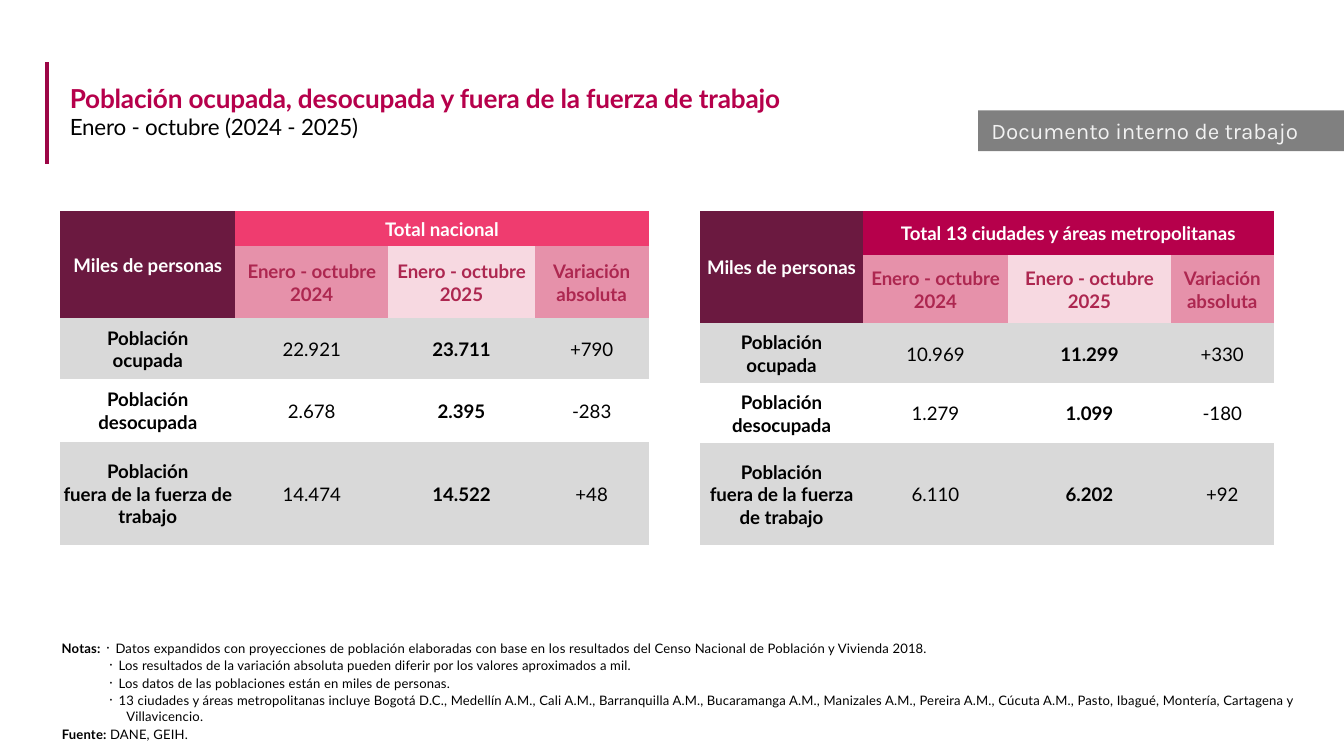
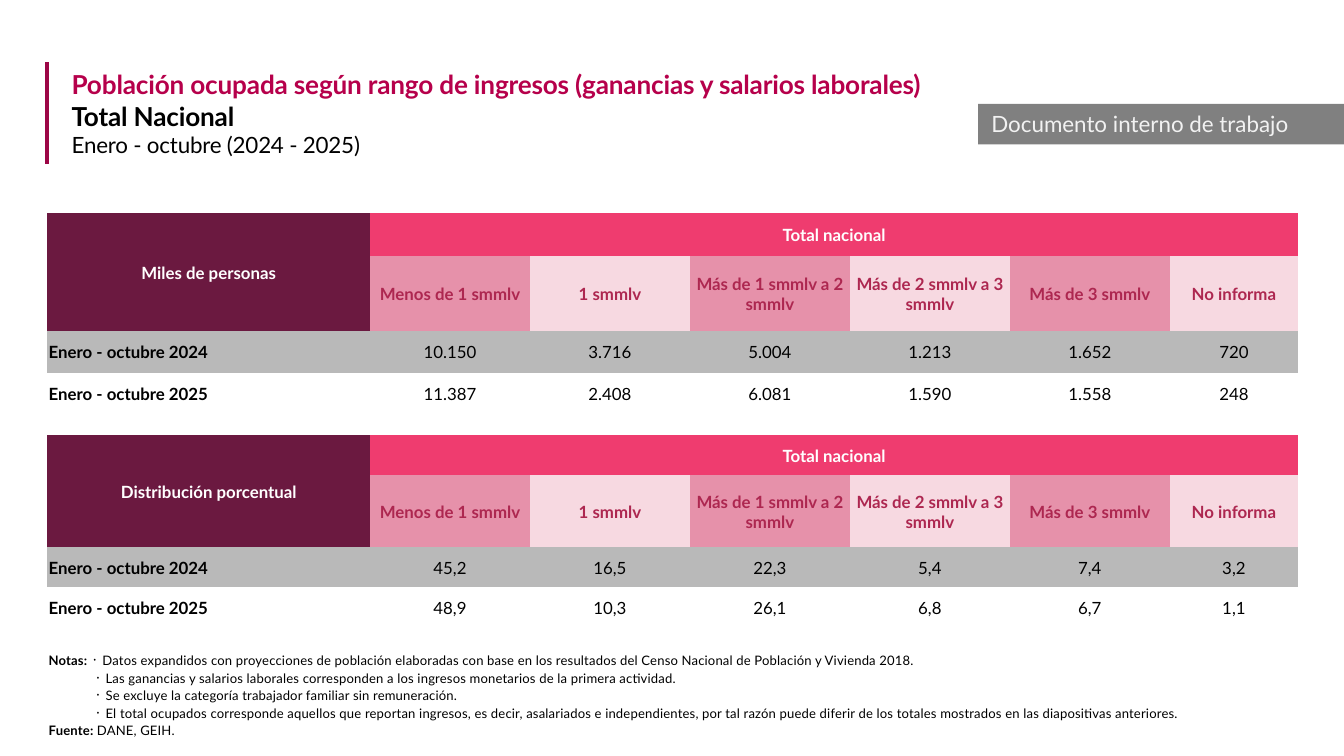
from dataclasses import dataclass

from lxml import etree
from pptx import Presentation
from pptx.dml.color import RGBColor
from pptx.enum import shapes, text
from pptx.oxml.ns import qn
from pptx.util import Pt


@dataclass(frozen=True)
class Theme:
    font: str = "Lato"
    crimson: str = "B6004B"
    pink: str = "EF3C6F"
    plum: str = "6B1940"
    rose: str = "E691AA"
    blush: str = "F7D9E1"
    wine: str = "AD2750"
    rule: str = "9C0646"
    banner: str = "808080"
    banner_text: str = "F2F2F2"
    black: str = "000000"
    white: str = "FFFFFF"
    title_size: float = 14
    period_size: float = 12
    banner_size: float = 12
    note_size: float = 7
    plain_table: str = "{2D5ABB26-0587-4C30-8999-92F81FD0307C}"


THEME = Theme()
PERIOD = "Enero - octubre (2024 - 2025)"
CENSUS_NOTE = ("Datos expandidos con proyecciones de población elaboradas con base en "
               "los resultados del Censo Nacional de Población y Vivienda 2018.")
PERIODS = ["Enero - octubre 2024", "Enero - octubre 2025"]
CHANGE_HEADS = PERIODS + ["Variación\nabsoluta"]
INCOME_HEADS = ["Menos de 1 smmlv", "1 smmlv", "Más de 1 smmlv a 2 smmlv",
                "Más de 2 smmlv a 3 smmlv", "Más de 3 smmlv", "No informa"]
GROUPS = ["Población\nocupada", "Población desocupada",
          "Población\nfuera de la fuerza de trabajo"]
INCOME_COLUMNS = [172.8] + [85.7] * 5 + [68.7]

SLIDES = [
    dict(
        title=[("Población ocupada, desocupada y fuera de la fuerza de trabajo",
                THEME.title_size, THEME.crimson, True),
               (PERIOD, THEME.period_size, THEME.black, False)],
        title_at=(32.4, 41, 688, 37),
        banner_top=59.2, banner_font="Karla",
        notes_at=(32.4, 339.8, 686, 57.6),
        notes=[CENSUS_NOTE,
               "Los resultados de la variación absoluta pueden diferir por los valores "
               "aproximados a mil.",
               "Los datos de las poblaciones están en miles de personas.",
               "13 ciudades y áreas metropolitanas incluye Bogotá D.C., Medellín A.M., "
               "Cali A.M., Barranquilla A.M., Bucaramanga A.M., Manizales A.M., "
               "Pereira A.M., Cúcuta A.M., Pasto, Ibagué, Montería, Cartagena y "
               "Villavicencio."],
        style=dict(size=10, band="D9D9D9", bold_column=2,
                   label_align=text.PP_ALIGN.CENTER),
        tables=[
            dict(at=(32.4, 113), corner="Miles de personas", heading="Total nacional",
                 heading_fill=THEME.pink, heads=CHANGE_HEADS, labels=GROUPS,
                 columns=[93.5, 82.2, 78.3, 61.2], rows=[18.8, 38.6, 32.6, 33.8, 55.2],
                 values=[["22.921", "23.711", "+790"],
                         ["2.678", "2.395", "-283"],
                         ["14.474", "14.522", "+48"]]),
            dict(at=(375, 113), corner="Miles de personas",
                 heading="Total 13 ciudades y áreas metropolitanas",
                 heading_fill=THEME.crimson, heads=CHANGE_HEADS, labels=GROUPS,
                 columns=[87.3, 77.7, 87.3, 55], rows=[23.6, 36.6, 32.1, 32.2, 54.5],
                 values=[["10.969", "11.299", "+330"],
                         ["1.279", "1.099", "-180"],
                         ["6.110", "6.202", "+92"]]),
        ],
    ),
    dict(
        title=[("Población ocupada según rango de ingresos (ganancias y salarios laborales)",
                THEME.title_size, THEME.crimson, True),
               ("Total Nacional", THEME.title_size, THEME.black, True),
               (PERIOD, THEME.period_size, THEME.black, False)],
        title_at=(33.4, 34, 512, 54),
        banner_top=55.6, banner_font=THEME.font,
        notes_at=(25.4, 347, 665, 48.4),
        notes=[CENSUS_NOTE,
               "Las ganancias y salarios laborales corresponden a los ingresos monetarios "
               "de la primera actividad.",
               "Se excluye la categoría trabajador familiar sin remuneración.",
               "El total ocupados corresponde aquellos que reportan ingresos, es decir, "
               "asalariados e independientes, por tal razón puede diferir de los totales "
               "mostrados en las diapositivas anteriores."],
        style=dict(size=9, band="B9B9B9", bold_column=None,
                   label_align=text.PP_ALIGN.LEFT),
        tables=[
            dict(at=(25.4, 114.2), corner="Miles de personas", heading="Total nacional",
                 heading_fill=THEME.pink, heads=INCOME_HEADS, labels=PERIODS,
                 columns=INCOME_COLUMNS, rows=[22.8, 40.2, 22.5, 22.5],
                 values=[["10.150", "3.716", "5.004", "1.213", "1.652", "720"],
                         ["11.387", "2.408", "6.081", "1.590", "1.558", "248"]]),
            dict(at=(25.4, 233), corner="Distribución porcentual", heading="Total nacional",
                 heading_fill=THEME.pink, heads=INCOME_HEADS, labels=PERIODS,
                 columns=INCOME_COLUMNS, rows=[21.5, 38.6, 21.6, 21.6],
                 values=[["45,2", "16,5", "22,3", "5,4", "7,4", "3,2"],
                         ["48,9", "10,3", "26,1", "6,8", "6,7", "1,1"]]),
        ],
    ),
]


def style_paragraph(para, size, color, bold=False, font=THEME.font,
                    align=text.PP_ALIGN.LEFT, spacing=None):
    """Set the paragraph's font; spacing is letter spacing in hundredths of a point."""
    para.alignment = align
    para.font.name = font
    para.font.size = Pt(size)
    para.font.bold = bold
    para.font.color.rgb = RGBColor.from_string(color)
    if spacing is not None:
        for span in para.runs:
            span._r.get_or_add_rPr().set("spc", str(spacing))


def fill_cell(cell, words, size, color, fill=None, bold=True,
              align=text.PP_ALIGN.CENTER):
    cell.margin_left = cell.margin_top = cell.margin_right = Pt(0.7)
    cell.margin_bottom = 0
    cell.vertical_anchor = text.MSO_ANCHOR.MIDDLE
    if fill:
        cell.fill.solid()
        cell.fill.fore_color.rgb = RGBColor.from_string(fill)
    else:
        cell.fill.background()
    para = cell.text_frame.paragraphs[0]
    para.text = words
    style_paragraph(para, size, color, bold, align=align)


deck = Presentation()
deck.slide_width, deck.slide_height = Pt(720), Pt(405)

for content in SLIDES:
    page = deck.slides.add_slide(deck.slide_layouts[5])

    # Title
    title = page.shapes.title
    title.left, title.top, title.width, title.height = map(Pt, content["title_at"])
    frame = title.text_frame
    frame.word_wrap = True
    frame.auto_size = text.MSO_AUTO_SIZE.NONE
    frame.vertical_anchor = text.MSO_ANCHOR.TOP
    frame.margin_left = frame.margin_right = Pt(5)
    frame.margin_top = frame.margin_bottom = Pt(2.9)
    frame.text = "\n".join(line[0] for line in content["title"])
    for para, (_, size, color, bold) in zip(frame.paragraphs, content["title"]):
        style_paragraph(para, size, color, bold, spacing=-10)

    # Rule beside the title
    rule = page.shapes.add_connector(shapes.MSO_CONNECTOR.STRAIGHT,
                                     Pt(25.2), Pt(87.8), Pt(25.2), Pt(33.2))
    rule.line.color.rgb = RGBColor.from_string(THEME.rule)
    rule.line.width = Pt(2)
    etree.SubElement(rule._element.spPr, qn("a:effectLst"))

    # Banner
    banner = page.shapes.add_shape(shapes.MSO_SHAPE.RECTANGLE, Pt(524),
                                   Pt(content["banner_top"]), Pt(196), Pt(21.8))
    banner.shadow.inherit = False
    banner.fill.solid()
    banner.fill.fore_color.rgb = RGBColor.from_string(THEME.banner)
    banner.line.fill.background()
    banner.text_frame.vertical_anchor = text.MSO_ANCHOR.TOP
    banner.text_frame.text = "Documento interno de trabajo"
    style_paragraph(banner.text_frame.paragraphs[0], THEME.banner_size,
                    THEME.banner_text, font=content["banner_font"])

    # Tables
    style = content["style"]
    size = style["size"]
    for data in content["tables"]:
        columns, rows = data["columns"], data["rows"]
        holder = page.shapes.add_table(len(rows), len(columns), *map(Pt, data["at"]),
                                       Pt(sum(columns)), Pt(sum(rows)))
        table = holder.table
        table.first_row = table.horz_banding = False
        table._tbl.tblPr.find(qn("a:tableStyleId")).text = THEME.plain_table
        for column, width in zip(table.columns, columns):
            column.width = Pt(width)
        for row, height in zip(table.rows, rows):
            row.height = Pt(height)

        table.cell(0, 0).merge(table.cell(1, 0))
        table.cell(0, 1).merge(table.cell(0, len(columns) - 1))
        fill_cell(table.cell(0, 0), data["corner"], size, THEME.white, THEME.plum)
        fill_cell(table.cell(0, 1), data["heading"], size, THEME.white,
                  data["heading_fill"])
        for c, head in enumerate(data["heads"], 1):
            fill_cell(table.cell(1, c), head, size, THEME.wine,
                      THEME.rose if c % 2 else THEME.blush)
        for r, (label, values) in enumerate(zip(data["labels"], data["values"]), 2):
            band = None if r % 2 else style["band"]
            fill_cell(table.cell(r, 0), label, size, THEME.black, band,
                      align=style["label_align"])
            for c, value in enumerate(values, 1):
                fill_cell(table.cell(r, c), value, size, THEME.black, band,
                          bold=c == style["bold_column"])

    # Notes and source
    box = page.shapes.add_textbox(*map(Pt, content["notes_at"]))
    frame = box.text_frame
    frame.word_wrap = True
    frame.vertical_anchor = text.MSO_ANCHOR.BOTTOM
    frame.margin_left = frame.margin_right = frame.margin_bottom = 0
    frame.margin_top = Pt(0.7)
    # Each line: bold lead, text, left margin, first-line indent
    lines = [("", "᛫ " + note, 35.3, -10.3) for note in content["notes"]]
    lines[0] = ("Notas: ", lines[0][1], 35.3, -34.6)
    lines.append(("Fuente: ", "DANE, GEIH.", 0.7, 0))
    for i, (lead, words, margin, indent) in enumerate(lines):
        para = frame.paragraphs[0] if i == 0 else frame.add_paragraph()
        if lead:
            span = para.add_run()
            span.text = lead
            span.font.bold = True
        para.add_run().text = words
        properties = para._p.get_or_add_pPr()
        properties.set("marL", str(Pt(margin)))
        properties.set("indent", str(Pt(indent)))
        para.line_spacing = 1.04
        if i:
            para.space_before = Pt(0.6)
        style_paragraph(para, THEME.note_size, THEME.black, spacing=10)

deck.save("out.pptx")
